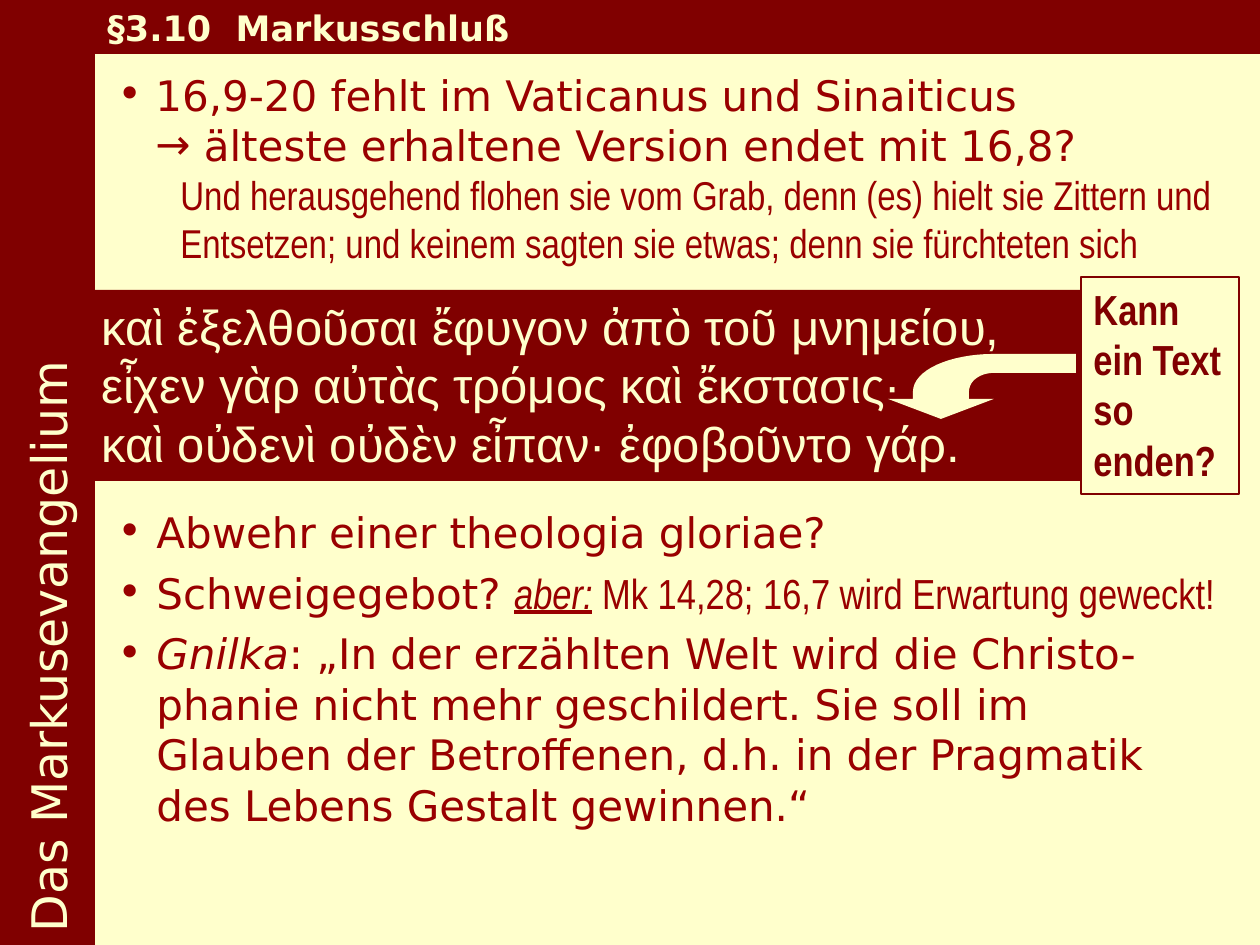
from lxml.etree import SubElement
from pptx import Presentation
from pptx.dml.color import RGBColor
from pptx.enum.shapes import MSO_SHAPE
from pptx.enum.text import MSO_ANCHOR
from pptx.oxml.ns import qn
from pptx.util import Pt

PX = 914400 / 126
COLORS = {"cream": "FFFFCC", "maroon": "800000", "red": "990000"}
SANS, NARROW, GREEK = "DejaVu Sans", "Arial Narrow", "Arial"


def emu(px):
    """Turn px into EMU."""
    return round(px * PX)


def color(name):
    """Look up a colour by name."""
    return RGBColor.from_string(COLORS[name])


def add_run(paragraph, text, font, size, ink, bold=False, italic=False, underline=False):
    """Append a formatted run; a newline in the text becomes a line break."""
    for index, line in enumerate(text.split("\n")):
        if index:
            paragraph.add_line_break()
        run = paragraph.add_run()
        run.text = line
        run.font.name, run.font.size = font, Pt(size)
        run.font.bold, run.font.italic, run.font.underline = bold, italic, underline
        run.font.color.rgb = color(ink)


def set_bullet(paragraph, character, margin=0, indent=0):
    """Give a paragraph a margin, an indent and, if named, a bullet character."""
    properties = paragraph._p.get_or_add_pPr()
    properties.set("marL", str(emu(margin)))
    properties.set("indent", str(emu(indent)))
    if character:
        SubElement(properties, qn("a:buFont")).set("typeface", SANS)
        SubElement(properties, qn("a:buChar")).set("char", character)


def next_paragraph(frame):
    """Return the first paragraph if it is unused, otherwise a new one."""
    first = frame.paragraphs[0]
    return frame.add_paragraph() if first.runs else first


def add_textbox(slide, left, top, width, height):
    """Add a wrapping text box and return its text frame."""
    frame = slide.shapes.add_textbox(*map(emu, (left, top, width, height))).text_frame
    frame.word_wrap = True
    return frame


def paint(shape, fill, line=None):
    """Set fill and outline and drop the shadow."""
    shape.shadow.inherit = False
    shape.fill.solid()
    shape.fill.fore_color.rgb = color(fill)
    if line:
        shape.line.color.rgb = color(line)
        shape.line.width = Pt(1.25)
    else:
        shape.line.fill.background()


def add_panel(slide, box, fill, texts, font, size, ink, bold=False, line=None):
    """Add a filled rectangle with left-aligned paragraphs."""
    panel = slide.shapes.add_shape(MSO_SHAPE.RECTANGLE, *map(emu, box))
    paint(panel, fill, line)
    frame = panel.text_frame
    frame.word_wrap = True
    frame.vertical_anchor = MSO_ANCHOR.TOP
    for text in texts:
        paragraph = next_paragraph(frame)
        set_bullet(paragraph, None)
        paragraph._p.get_or_add_pPr().set("algn", "l")
        add_run(paragraph, text, font, size, ink, bold)
    return panel


def add_sidebar(slide):
    """Add the left bar whose title reads upwards."""
    sidebar = add_panel(slide, (0, 0, 95, 945), "maroon", ["Das Markusevangelium"],
                        SANS, 28, "cream")
    sidebar.text_frame.vertical_anchor = MSO_ANCHOR.MIDDLE
    sidebar.text_frame._txBody.bodyPr.set("vert", "vert270")


def add_findings(slide):
    """Add the manuscript evidence with the translated verse."""
    frame = add_textbox(slide, 105, 63, 1134, 210)
    rows = [
        (" 16,9-20 fehlt im Vaticanus und Sinaiticus", "•", 0, SANS, 24),
        (" älteste erhaltene Version endet mit 16,8?", "→", 38, SANS, 24),
        ("Und herausgehend flohen sie vom Grab, denn (es) hielt sie Zittern und "
         "Entsetzen; und keinem sagten sie etwas; denn sie fürchteten sich",
         None, 63, NARROW, 23),
    ]
    for text, bullet, margin, font, size in rows:
        paragraph = next_paragraph(frame)
        set_bullet(paragraph, bullet, margin)
        add_run(paragraph, text, font, size, "red")


def add_interpretations(slide):
    """Add the bulleted interpretations."""
    frame = add_textbox(slide, 105, 500, 1155, 340)
    rows = [
        [("Abwehr einer theologia gloriae?", SANS, {})],
        [("Schweigegebot? ", SANS, {}),
         ("aber:", NARROW, {"italic": True, "underline": True}),
         (" Mk 14,28; 16,7 wird Erwartung geweckt!", NARROW, {})],
        [("Gnilka", SANS, {"italic": True}),
         (": „In der erzählten Welt wird die Christo-\n"
          "phanie nicht mehr geschildert. Sie soll im\n"
          "Glauben der Betroffenen, d.h. in der Pragmatik\n"
          "des Lebens Gestalt gewinnen.“", SANS, {})],
    ]
    for runs in rows:
        paragraph = next_paragraph(frame)
        paragraph.space_before = Pt(6)
        set_bullet(paragraph, "•", 39, -39)
        for text, font, style in runs:
            add_run(paragraph, text, font, 24, "red", **style)


def curve(*controls, steps=16):
    """Sample a cubic Bézier curve, leaving out its start."""
    def point(t):
        weights = ((1 - t) ** 3, 3 * t * (1 - t) ** 2, 3 * t * t * (1 - t), t ** 3)
        return tuple(sum(w * c for w, c in zip(weights, axis)) for axis in zip(*controls))
    return [point(step / steps) for step in range(1, steps + 1)]


def add_bent_arrow(slide):
    """Add the curved arrow from the question to the end of the verse."""
    outline = [(888, 399), (913, 399), (913, 392)]
    outline += curve((913, 392), (913, 370), (950, 354), (994, 354))
    outline += [(1076, 354), (1076, 373), (994, 373)]
    outline += curve((994, 373), (980, 373), (969, 381), (969, 392))
    outline += [(969, 399), (994, 399)]
    builder = slide.shapes.build_freeform(emu(941), emu(419))
    builder.add_line_segments([(emu(x), emu(y)) for x, y in outline], close=True)
    paint(builder.convert_to_shape(), "cream")


def main():
    """Build and save the slide."""
    presentation = Presentation()
    presentation.slide_width, presentation.slide_height = emu(1260), emu(945)
    slide = presentation.slides.add_slide(presentation.slide_layouts[6])
    slide.background.fill.solid()
    slide.background.fill.fore_color.rgb = color("cream")
    add_findings(slide)
    add_panel(slide, (89, 290, 998, 191), "maroon",
              ["καὶ ἐξελθοῦσαι ἔφυγον ἀπὸ τοῦ μνημείου, εἶχεν γὰρ αὐτὰς τρόμος καὶ ἔκστασις·",
               "καὶ οὐδενὶ οὐδὲν εἶπαν· ἐφοβοῦντο γάρ."], GREEK, 28, "cream")
    add_interpretations(slide)
    add_sidebar(slide)
    add_panel(slide, (95, 0, 1165, 54), "maroon", ["§3.10  Markusschluß"],
              SANS, 20, "cream", bold=True)
    add_panel(slide, (1081, 277, 158, 217), "cream", ["Kann ein Text so enden?"],
              NARROW, 24, "maroon", bold=True, line="maroon")
    add_bent_arrow(slide)
    presentation.save("out.pptx")


if __name__ == "__main__":
    main()
